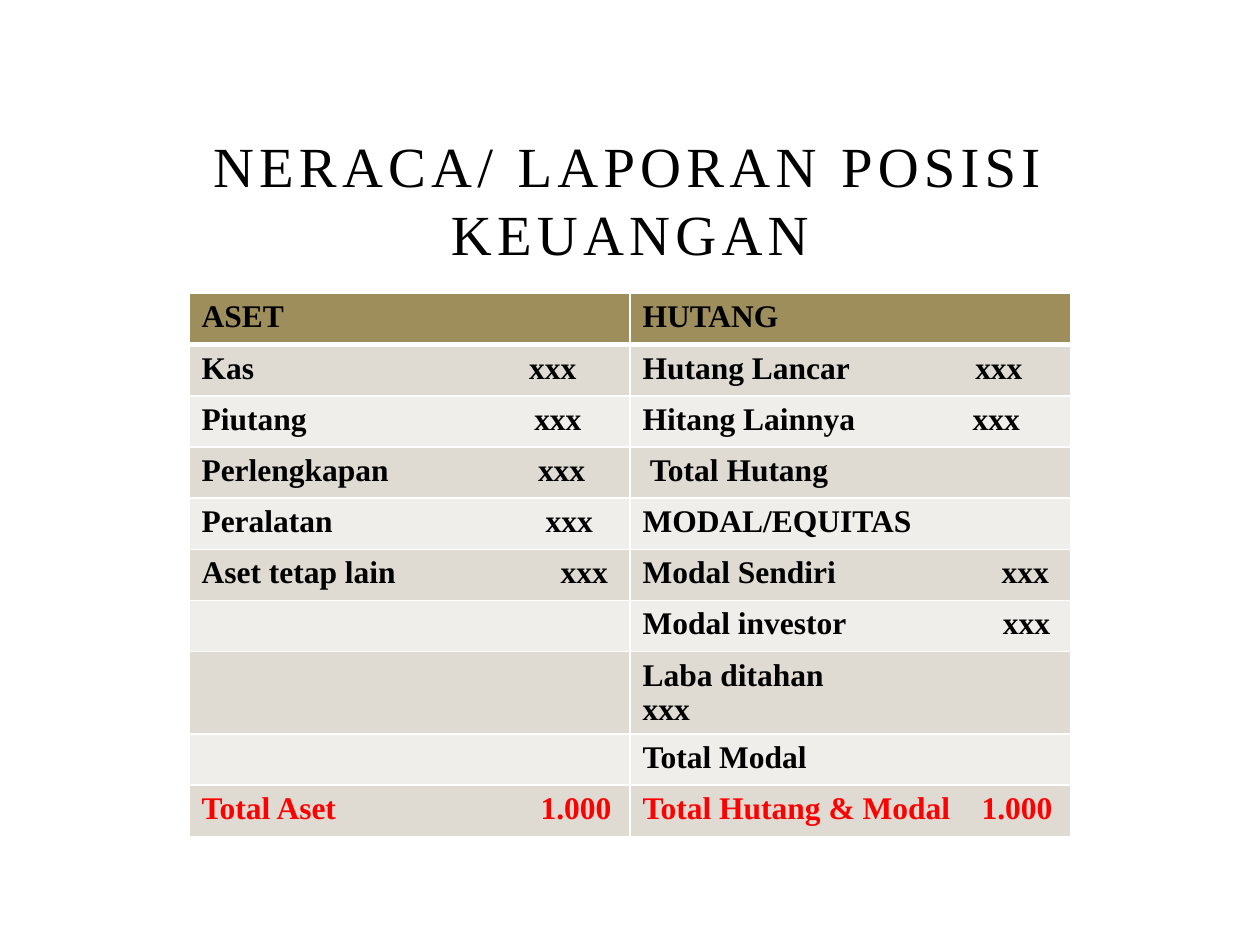
from pptx import Presentation
from pptx.dml.color import RGBColor
from pptx.enum.text import MSO_ANCHOR, MSO_AUTO_SIZE, PP_ALIGN
from pptx.oxml.ns import qn
from pptx.util import Inches, Pt
from lxml.etree import SubElement

FONT = "Times New Roman"
BLACK, RED, WHITE = "000000", "FF0000", "FFFFFF"
HEADER, BANDS = "9E8E5C", ("DFDBD2", "F0EEEA")
TITLE = "NERACA/ LAPORAN POSISI KEUANGAN"

ROWS = [
    (("ASET",), ("HUTANG",)),
    (("Kas", "xxx", 2.6), ("Hutang Lancar", "xxx", 2.64)),
    (("Piutang", "xxx", 2.64), ("Hitang Lainnya", "xxx", 2.62)),
    (("Perlengkapan", "xxx", 2.67), (" Total Hutang",)),
    (("Peralatan", "xxx", 2.73), ("MODAL/EQUITAS",)),
    (("Aset tetap lain", "xxx", 2.85), ("Modal Sendiri", "xxx", 2.85)),
    ((), ("Modal investor", "xxx", 2.86)),
    ((), ("Laba ditahan\vxxx",)),
    ((), ("Total Modal",)),
    (("Total Aset", "1.000", 2.69), ("Total Hutang & Modal", "1.000", 2.69)),
]


def rgb(color):
    return RGBColor.from_string(color)


def write(tf, text, size=18, color=BLACK, bold=False, align=None, spacing=None, tab=None):
    p = tf.paragraphs[0]
    p.alignment = align
    if tab:
        tabs = SubElement(p._p.get_or_add_pPr(), qn("a:tabLst"))
        SubElement(tabs, qn("a:tab"), pos=str(Inches(tab)), algn="l")
    p.text = text
    for r in p.runs:
        r.font.name, r.font.size, r.font.bold = FONT, Pt(size), bold
        r.font.color.rgb = rgb(color)
        if spacing:
            r.font._element.set("spc", str(int(spacing * 100)))


def add_borders(cell, **widths):
    tcPr = cell._tc.get_or_add_tcPr()
    for i, side in enumerate(("lnL", "lnR", "lnT", "lnB")):
        ln = tcPr.makeelement(qn(f"a:{side}"), {"w": str(Pt(widths.get(side, 1)))})
        fill = SubElement(ln, qn("a:solidFill"))
        SubElement(fill, qn("a:srgbClr"), val=WHITE)
        tcPr.insert(i, ln)


def add_title(slide, left, top, width, height):
    sp = slide.shapes.title
    sp.left, sp.top, sp.width, sp.height = left, top, width, height
    tf = sp.text_frame
    tf.word_wrap = True
    tf.auto_size = MSO_AUTO_SIZE.NONE
    tf.vertical_anchor = MSO_ANCHOR.BOTTOM
    write(tf, TITLE, size=32.4, align=PP_ALIGN.CENTER, spacing=3)


def add_balance_sheet(slide, left, top, width, height):
    table = slide.shapes.add_table(len(ROWS), 2, left, top, width, height).table
    for i, entries in enumerate(ROWS):
        for j, entry in enumerate(entries):
            cell = table.cell(i, j)
            cell.fill.solid()
            cell.fill.fore_color.rgb = rgb(BANDS[(i - 1) % 2] if i else HEADER)
            add_borders(cell, lnT=3 if i == 1 else 1, lnB=1 if i else 3)
            if entry:
                color = RED if i == len(ROWS) - 1 else BLACK
                tab = entry[2] if len(entry) > 1 else None
                write(cell.text_frame, "\t".join(entry[:2]), color=color, bold=True, tab=tab)


def main():
    prs = Presentation()
    prs.slide_width, prs.slide_height = Inches(10), Inches(7.5)
    slide = prs.slides.add_slide(prs.slide_layouts[5])
    add_title(slide, Inches(1.5), Inches(1.42), Inches(7), Inches(0.75))
    add_balance_sheet(slide, Inches(1.5), Inches(2.33), Inches(7), Inches(4.06))
    prs.save("out.pptx")


if __name__ == "__main__":
    main()
